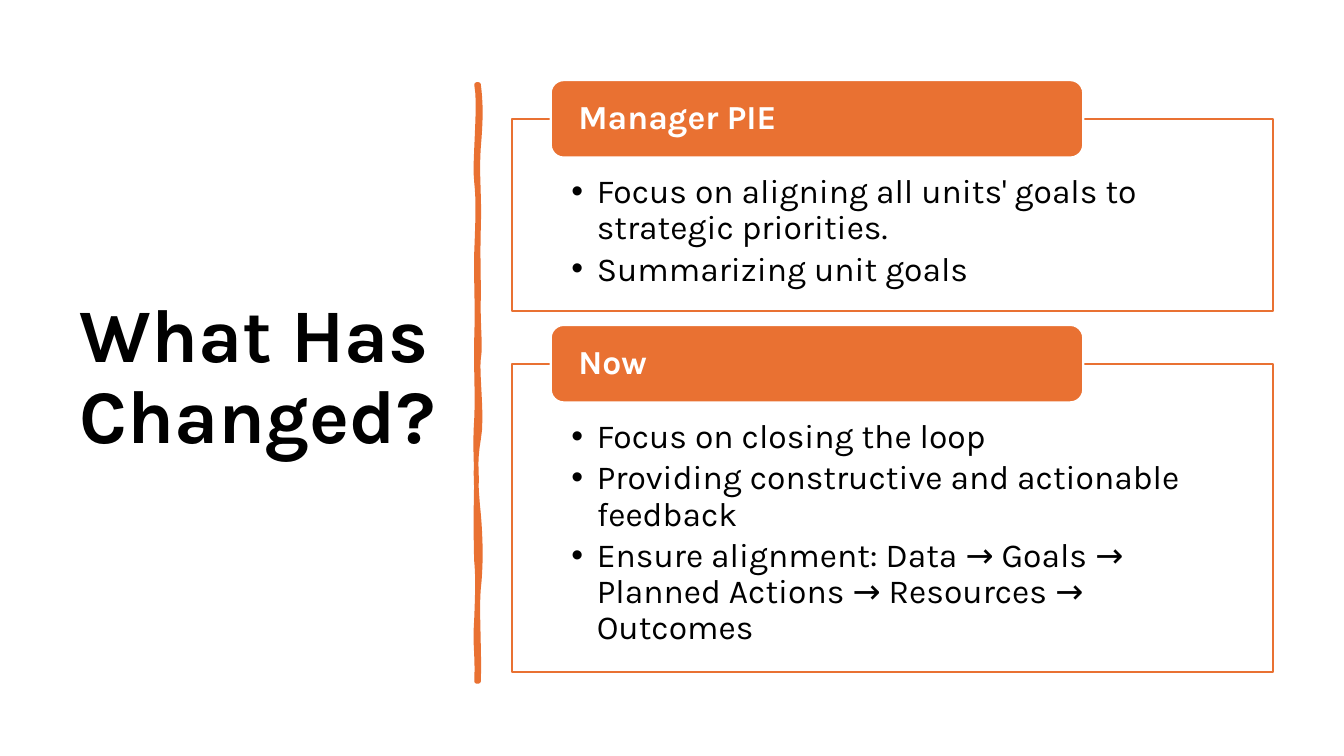
"""Build the 'What Has Changed?' slide with two titled list boxes."""
from pptx import Presentation
from pptx.dml.color import RGBColor
from pptx.enum.shapes import MSO_SHAPE
from pptx.enum.text import MSO_ANCHOR, MSO_AUTO_SIZE, PP_ALIGN
from pptx.util import Cm, Pt

TITLE = "What Has Changed?"
SECTIONS = [
    ("Manager PIE", 4.83, [
        "Focus on aligning all units' goals to strategic priorities.",
        "Summarizing unit goals",
    ]),
    ("Now", 7.77, [
        "Focus on closing the loop",
        "Providing constructive and actionable feedback",
        "Ensure alignment: Data → Goals → Planned Actions → Resources → Outcomes",
    ]),
]

RIGHT_X, LEFT_X = 12.06, 12.01
DIVIDER_TOP, DIVIDER_BOTTOM = 2.13, 17.17
# Each curve: first control x, y, second control x, y, end y
RIGHT_EDGE = [
    (12.12, 2.59, 12.12, 3.02, 3.71),
    (12.01, 4.39, 12.09, 4.95, 5.74),
    (12.04, 6.53, 12.06, 6.65, 7.47),
    (12.04, 8.26, 12.12, 8.69, 9.04),
    (12.01, 9.4, 12.17, 10.52, 11.07),
    (11.96, 11.61, 11.99, 12.29, 12.95),
    (12.12, 13.61, 12.12, 14.33, 14.83),
    (12.01, 15.32, 12.09, 16.51, DIVIDER_BOTTOM),
]
LEFT_EDGE = [
    (12.04, 16.41, 11.96, 16.36, 15.57),
    (12.04, 14.81, 12.04, 14.48, 14.15),
    (11.99, 13.82, 11.99, 12.57, 12.12),
    (12.01, 11.66, 11.96, 11.3, 10.54),
    (12.04, 9.8, 11.99, 9.47, 8.51),
    (12.04, 7.57, 11.99, 7.14, 6.35),
    (12.04, 5.54, 12.06, 5.08, 4.6),
    (11.94, 4.14, 12.12, 2.64, DIVIDER_TOP),
]

FONT = "Karla"
ORANGE = RGBColor(0xE9, 0x71, 0x32)
WHITE = RGBColor(0xFF, 0xFF, 0xFF)
BLACK = RGBColor(0x00, 0x00, 0x00)
ROUND_RECT = MSO_SHAPE.ROUNDED_RECTANGLE
LEFT, TOP, MIDDLE = PP_ALIGN.LEFT, MSO_ANCHOR.TOP, MSO_ANCHOR.MIDDLE
NO_FIT = MSO_AUTO_SIZE.NONE

BOX_LEFT, BOX_WIDTH = 12.9, 19.18
HEADER_LEFT, HEADER_WIDTH, HEADER_HEIGHT = 13.88, 13.42, 1.95
FIRST_TOP, HEADER_RISE, GAP = 2.02, 0.98, 0.36
CURVE_STEPS = 8


def place(sp, left, top, width, height):
    sp.left, sp.top, sp.width, sp.height = map(Cm, (left, top, width, height))


def paint(sp, fill, line, weight):
    sp.fill.solid()
    sp.fill.fore_color.rgb = fill
    sp.line.color.rgb = line
    sp.line.width = Pt(weight)


def write(sp, lines, size, color, bold, anchor, after=0):
    tf = sp.text_frame
    tf.word_wrap = True
    tf.auto_size = NO_FIT
    tf.vertical_anchor = anchor
    tf.text = "\n".join(lines)
    for p in tf.paragraphs:
        p.alignment = LEFT
        p.line_spacing = 0.9
        p.space_before = Pt(0)
        p.space_after = Pt(after)
        for r in p.runs:
            r.font.name = FONT
            r.font.size = Pt(size)
            r.font.bold = bold
            r.font.color.rgb = color


def set_margins(tf, side, top, bottom):
    tf.margin_left = tf.margin_right = Cm(side)
    tf.margin_top, tf.margin_bottom = Cm(top), Cm(bottom)


def edge_points(x, y, curves):
    points = [(Cm(x), Cm(y))]
    for x1, y1, x2, y2, end in curves:
        for i in range(1, CURVE_STEPS + 1):
            t = i / CURVE_STEPS
            u = 1 - t
            a, b, c, d = u ** 3, 3 * u * u * t, 3 * u * t * t, t ** 3
            points.append((Cm(a * x + b * x1 + c * x2 + d * x),
                           Cm(a * y + b * y1 + c * y2 + d * end)))
        y = end
    return points


def add_divider(slide):
    points = (edge_points(RIGHT_X, DIVIDER_TOP, RIGHT_EDGE)
              + edge_points(LEFT_X, DIVIDER_BOTTOM, LEFT_EDGE))
    builder = slide.shapes.build_freeform(*points[0])
    builder.add_line_segments(points[1:], close=True)
    sp = builder.convert_to_shape()
    sp.shadow.inherit = False
    paint(sp, ORANGE, ORANGE, 3.25)


def fill_list_box(sp, top, height, items):
    place(sp, BOX_LEFT, top, BOX_WIDTH, height)
    paint(sp, WHITE, ORANGE, 1.5)
    write(sp, items, 24, BLACK, False, TOP, after=3.6)
    set_margins(sp.text_frame, 1.5, 1.4, 0.48)
    for p in sp.text_frame.paragraphs:
        pPr = p._p.get_or_add_pPr()
        pPr.set("marL", str(Cm(0.64)))
        pPr.set("indent", str(-Cm(0.64)))


def add_header(slide, top, heading):
    sp = slide.shapes.add_shape(ROUND_RECT, 0, 0, 0, 0)
    sp.shadow.inherit = False
    place(sp, HEADER_LEFT, top, HEADER_WIDTH, HEADER_HEIGHT)
    paint(sp, ORANGE, WHITE, 1.5)
    write(sp, [heading], 24, WHITE, True, MIDDLE)
    set_margins(sp.text_frame, 0.6, 0, 0)


def main():
    prs = Presentation()
    prs.slide_width, prs.slide_height = Cm(33.87), Cm(19.05)
    slide = prs.slides.add_slide(prs.slide_layouts[3])
    title, *boxes = slide.placeholders
    place(title, 1.75, 1.78, 9.5, 15.52)
    write(title, [TITLE], 54, BLACK, True, MIDDLE)
    add_divider(slide)
    top = FIRST_TOP
    for box, (heading, height, items) in zip(boxes, SECTIONS):
        fill_list_box(box, top + HEADER_RISE, height, items)
        add_header(slide, top, heading)
        top += HEADER_RISE + height + GAP
    prs.save("out.pptx")


if __name__ == "__main__":
    main()
